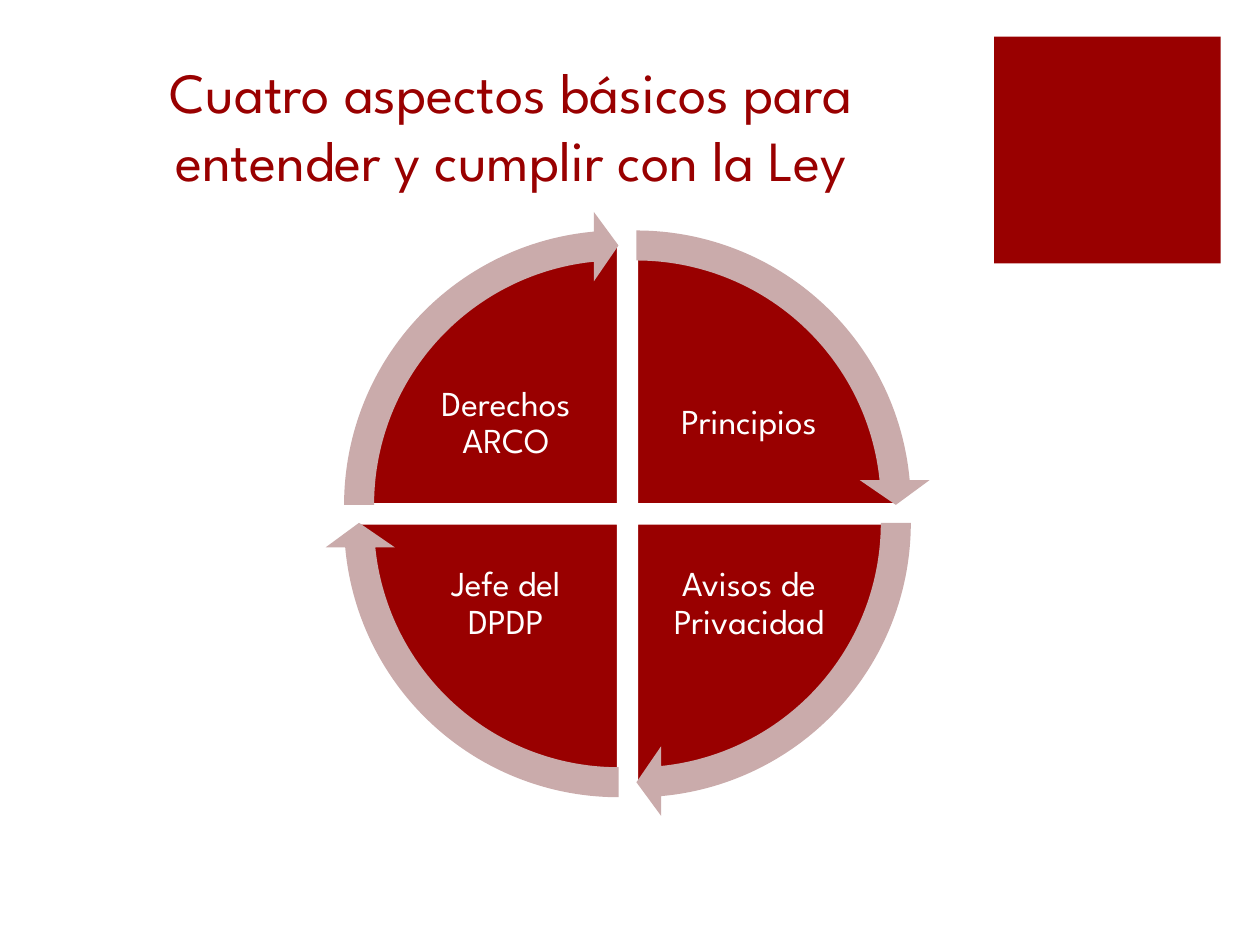
from pptx import Presentation
from pptx.dml.color import RGBColor
from pptx.enum.shapes import MSO_SHAPE
from pptx.enum.text import MSO_ANCHOR, PP_ALIGN
from pptx.util import Cm, Pt

PIE, ARROW, RECTANGLE = MSO_SHAPE.PIE, MSO_SHAPE.CIRCULAR_ARROW, MSO_SHAPE.RECTANGLE
MIDDLE, BOTTOM = MSO_ANCHOR.MIDDLE, MSO_ANCHOR.BOTTOM
CENTER = PP_ALIGN.CENTER

TITLE = "Cuatro aspectos básicos para entender y cumplir con la Ley"
# label, column side, row side, start angle in degrees
QUADRANTS = [
    ("Principios", 1, -1, 270),
    ("Avisos de Privacidad", 1, 1, 0),
    ("Jefe del DPDP", -1, 1, 90),
    ("Derechos ARCO", -1, -1, 180),
]
THEME = {
    "font": "League Spartan",
    "red": RGBColor(0x99, 0x00, 0x00),
    "arrow": RGBColor(0xCA, 0xAB, 0xAB),
    "white": RGBColor(0xFF, 0xFF, 0xFF),
    "title_size": Pt(32.4),
    "label_size": Pt(20),
    "label_after": Pt(7),
    "gap_line": Pt(2),
}

# Lengths in centimetres
WHEEL_X, WHEEL_Y = 12.65, 10.36
QUADRANT_SHIFT = 0.18
PIE_SIZE, ARROW_SIZE = 10.57, 11.86
LABEL_WIDTH, LABEL_HEIGHT = 3.89, 2.9
LABEL_SHIFT_X, LABEL_SHIFT_Y = 2.45, 1.82
LABEL_INSET = 0.08
ARROW_SWEEP = 84.54


def angle(degrees):
    """Convert degrees to the adjustment unit of 0.6 per degree."""
    return degrees % 360 * 0.6


def centred_box(x, y, width, height):
    return Cm(x - width / 2), Cm(y - height / 2), Cm(width), Cm(height)


def add_filled(slide, kind, box, color, adjustments=()):
    shape = slide.shapes.add_shape(kind, *box)
    shape.shadow.inherit = False
    shape.fill.solid()
    shape.fill.fore_color.rgb = color
    shape.line.fill.background()
    for index, value in enumerate(adjustments):
        shape.adjustments[index] = value
    return shape


def add_text(slide, text, box, size, color, anchor):
    text_frame = slide.shapes.add_textbox(*box).text_frame
    text_frame.word_wrap = True
    text_frame.vertical_anchor = anchor
    text_frame.text = text
    paragraph = text_frame.paragraphs[0]
    paragraph.alignment = CENTER
    font = paragraph.runs[0].font
    font.name, font.size, font.color.rgb = THEME["font"], size, color
    return text_frame


def add_quadrant(slide, label, side_x, side_y, start):
    x = WHEEL_X + side_x * QUADRANT_SHIFT
    y = WHEEL_Y + side_y * QUADRANT_SHIFT
    pie = add_filled(slide, PIE, centred_box(x, y, PIE_SIZE, PIE_SIZE),
                     THEME["red"], (angle(start), angle(start + 90)))
    pie.line.color.rgb = THEME["white"]
    pie.line.width = THEME["gap_line"]

    box = centred_box(WHEEL_X + side_x * LABEL_SHIFT_X,
                      WHEEL_Y + side_y * LABEL_SHIFT_Y, LABEL_WIDTH, LABEL_HEIGHT)
    text_frame = add_text(slide, label, box, THEME["label_size"], THEME["white"], MIDDLE)
    text_frame.margin_left = text_frame.margin_right = Cm(LABEL_INSET)
    text_frame.margin_top = text_frame.margin_bottom = Cm(LABEL_INSET)
    paragraph = text_frame.paragraphs[0]
    paragraph.line_spacing = 0.9
    paragraph.space_after = THEME["label_after"]


def add_cycle_arrow(slide, side_x, side_y, start):
    box = centred_box(WHEEL_X + side_x * QUADRANT_SHIFT,
                      WHEEL_Y + side_y * QUADRANT_SHIFT, ARROW_SIZE, ARROW_SIZE)
    add_filled(slide, ARROW, box, THEME["arrow"],
               (0.051, 3.275, angle(start + ARROW_SWEEP), angle(start), 0.059))


def main():
    presentation = Presentation()
    presentation.slide_width, presentation.slide_height = Cm(25.4), Cm(19.05)
    slide = presentation.slides.add_slide(presentation.slide_layouts[6])

    corner_box = Cm(20.04), Cm(0.74), Cm(4.57), Cm(4.57)
    add_filled(slide, RECTANGLE, corner_box, THEME["red"])
    for quadrant in QUADRANTS:
        add_quadrant(slide, *quadrant)
    for _, side_x, side_y, start in QUADRANTS:
        add_cycle_arrow(slide, side_x, side_y, start)
    title_box = Cm(1.27), Cm(0.84), Cm(18.08), Cm(3.18)
    add_text(slide, TITLE, title_box, THEME["title_size"], THEME["red"], BOTTOM)

    presentation.save("out.pptx")


if __name__ == "__main__":
    main()
